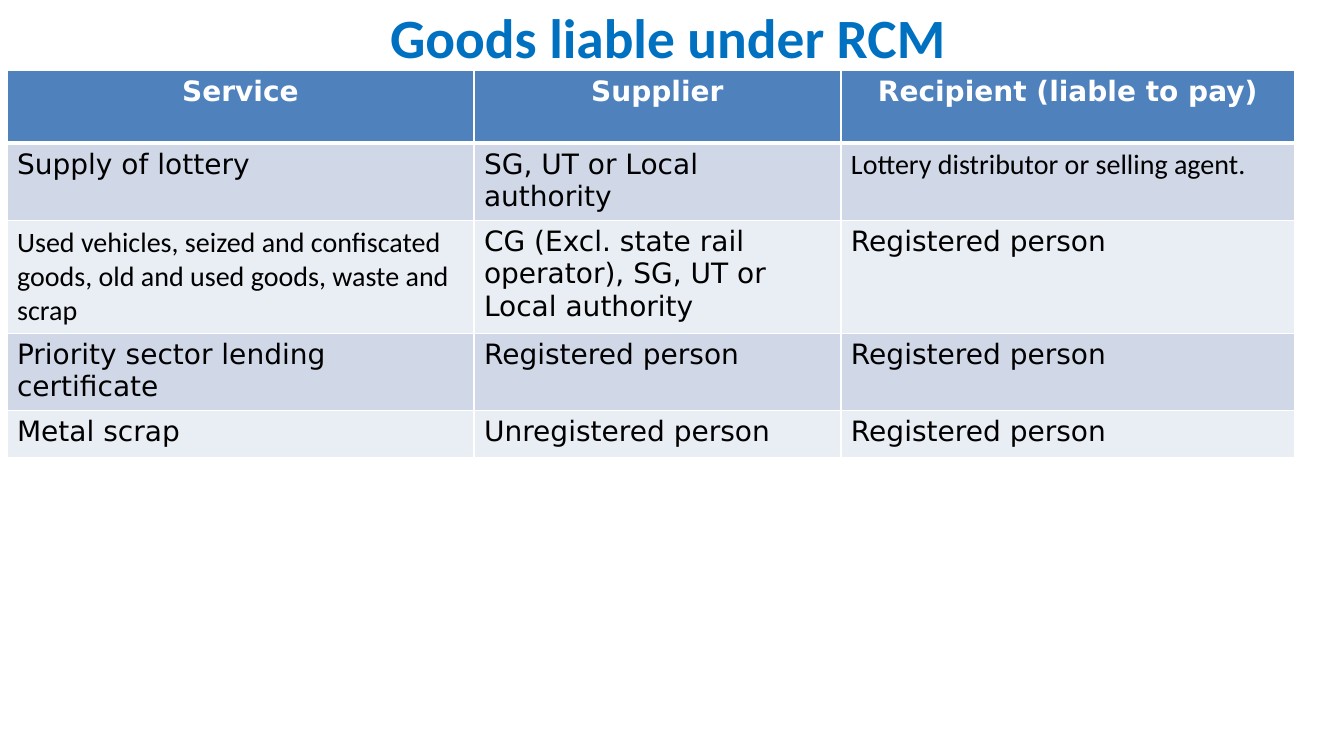
from lxml import etree
from pptx import Presentation
from pptx.dml.color import RGBColor
from pptx.enum.text import MSO_ANCHOR, PP_ALIGN
from pptx.oxml.ns import qn
from pptx.util import Pt

EMU_PER_PX = 914400 / 100.8
CENTER = PP_ALIGN.CENTER
LEFT = PP_ALIGN.LEFT
MIDDLE = MSO_ANCHOR.MIDDLE

SANS = "DejaVu Sans"
CALIBRI = "Calibri"
WHITE = "FFFFFF"
HEADER_FILL = "4F81BD"
BAND_FILLS = ("D0D8E8", "E9EDF4")

COLUMN_WIDTHS = (467, 367, 454)
ROW_HEIGHTS = (73, 75, 113, 75, 47)
HEADINGS = ("Service", "Supplier", "Recipient (liable to pay)")
GOODS = (
    ("Supply of lottery", "SG, UT or Local authority",
     "Lottery distributor or selling agent."),
    ("Used vehicles, seized and confiscated goods, old and used goods, waste and scrap",
     "CG (Excl. state rail operator), SG, UT or Local authority", "Registered person"),
    ("Priority sector lending certificate", "Registered person", "Registered person"),
    ("Metal scrap", "Unregistered person", "Registered person"),
)
CALIBRI_CELLS = {(1, 2), (2, 0)}


def px(length):
    return round(length * EMU_PER_PX)


def color(value):
    return RGBColor.from_string(value)


def add_span(para, text, size, font, ink, bold=False, align=LEFT):
    para.alignment = align
    span = para.add_run()
    span.text = text
    span.font.size = Pt(size)
    span.font.name = font
    span.font.bold = bold
    span.font.color.rgb = color(ink)


def add_title(page, text):
    box = page.shapes.add_textbox(px(63), px(3), px(1210), px(67))
    frame = box.text_frame
    frame.word_wrap = True
    frame.vertical_anchor = MIDDLE
    add_span(frame.paragraphs[0], text, 39.6, CALIBRI, "0070C0", True, CENTER)


def set_borders(cell, bottom_width):
    """Draw white cell edges, 1 pt except for the bottom one."""
    properties = cell._tc.get_or_add_tcPr()
    edges = (("a:lnL", 1), ("a:lnR", 1), ("a:lnT", 1), ("a:lnB", bottom_width))
    for position, (tag, width) in enumerate(edges):
        line = etree.Element(qn(tag), w=str(Pt(width)))
        fill = etree.SubElement(line, qn("a:solidFill"))
        etree.SubElement(fill, qn("a:srgbClr"), val=WHITE)
        properties.insert(position, line)


def fill_cell(cell, text, fill, font, ink, header):
    cell.fill.solid()
    cell.fill.fore_color.rgb = color(fill)
    set_borders(cell, 3 if header else 1)
    align = CENTER if header else LEFT
    add_span(cell.text_frame.paragraphs[0], text, 20, font, ink, header, align)


def add_goods_table(page):
    rows = (HEADINGS, *GOODS)
    table = page.shapes.add_table(
        len(rows), len(HEADINGS), px(7), px(70),
        px(sum(COLUMN_WIDTHS)), px(sum(ROW_HEIGHTS))).table
    for column, width in zip(table.columns, COLUMN_WIDTHS):
        column.width = px(width)
    for row, height in zip(table.rows, ROW_HEIGHTS):
        row.height = px(height)
    for row_index, texts in enumerate(rows):
        header = row_index == 0
        fill = HEADER_FILL if header else BAND_FILLS[(row_index - 1) % 2]
        ink = WHITE if header else "000000"
        for column_index, text in enumerate(texts):
            font = CALIBRI if (row_index, column_index) in CALIBRI_CELLS else SANS
            cell = table.cell(row_index, column_index)
            fill_cell(cell, text, fill, font, ink, header)


def main():
    deck = Presentation()
    deck.slide_width = px(1344)
    deck.slide_height = px(756)
    page = deck.slides.add_slide(deck.slide_layouts[6])
    add_title(page, "Goods liable under RCM")
    add_goods_table(page)
    deck.save("out.pptx")


if __name__ == "__main__":
    main()
